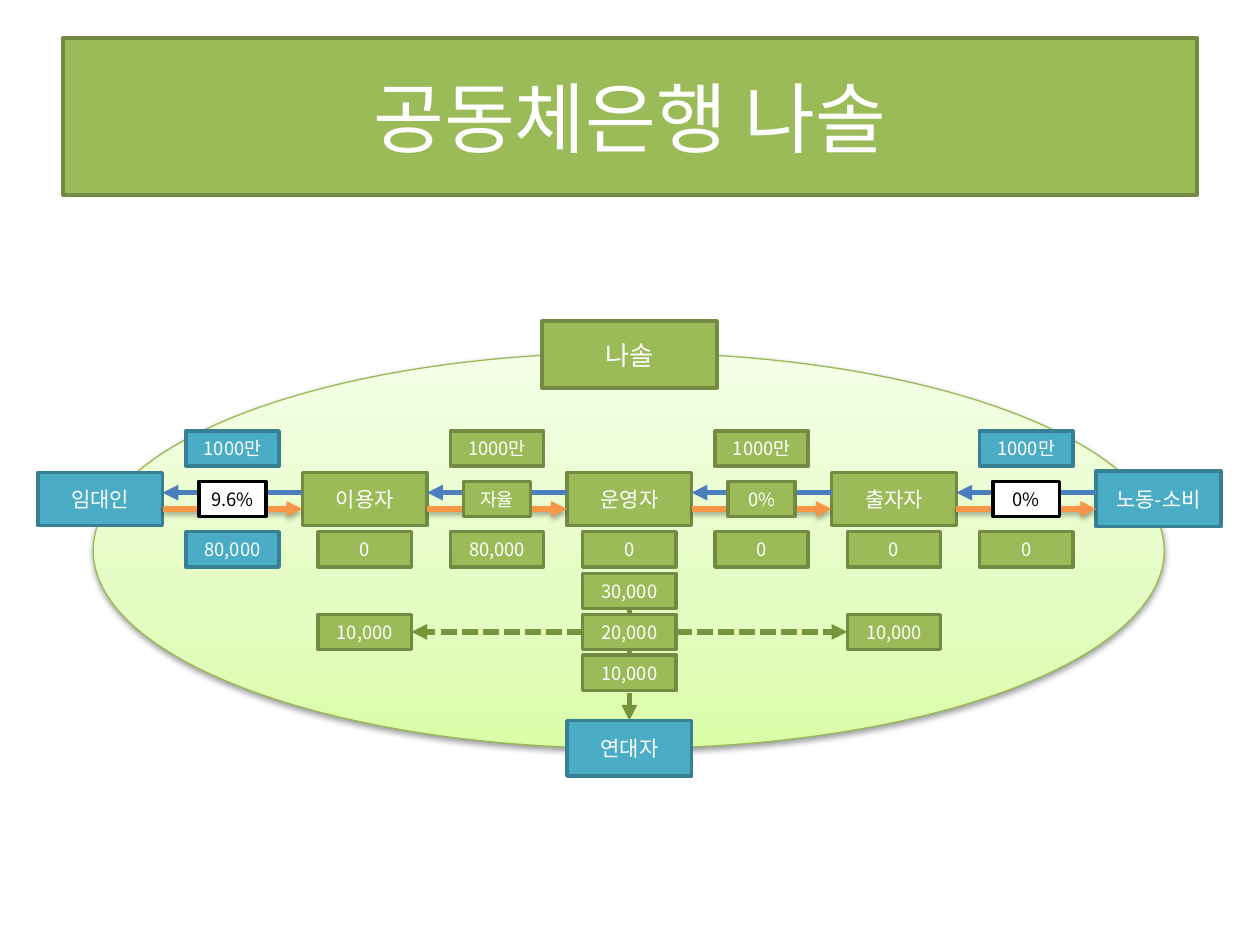
from lxml.etree import SubElement
from pptx import Presentation
from pptx.dml.color import RGBColor
from pptx.enum.dml import MSO_LINE
from pptx.enum.shapes import MSO_CONNECTOR, MSO_SHAPE
from pptx.enum.text import MSO_ANCHOR, PP_ALIGN
from pptx.oxml.ns import qn
from pptx.util import Inches, Pt

THEME = {
    "font": "Noto Sans CJK KR",
    "title": 44, "bank": 15, "person": 12, "value": 10.5,
    "box_line": 2, "arrow_line": 3, "ellipse_line": 0.75,
    "inside": ("9BBB59", "738A42", "FFFFFF"),
    "outside": ("4BACC6", "377F92", "FFFFFF"),
    "market": ("FFFFFF", "000000", "000000"),
    "ellipse": "98B955",
    "gradient": [(0, "DAFDA7"), (35, "E4FCC2"), (100, "F5FFE7")],
    "money": "4B7EBC", "interest": "F79646", "share": "77933C",
}

TITLE = "공동체은행 나솔"
BANK = "나솔"
PARTNER = "연대자"
PEOPLE = [
    ("임대인", "outside", 0.42),
    ("이용자", "inside", 0.42),
    ("운영자", "inside", 0.42),
    ("출자자", "inside", 0.42),
    ("노동-소비", "outside", 0.44),
]
FLOWS = [
    (("1000만", "outside"), ("9.6%", "market"), ("80,000", "outside")),
    (("1000만", "inside"), ("자율", "inside"), ("80,000", "inside")),
    (("1000만", "inside"), ("0%", "inside"), ("0", "inside")),
    (("1000만", "outside"), ("0%", "market"), ("0", "inside")),
]
BALANCES = {1: "0", 2: "0", 3: "0"}
SHARES = [
    ("reserve", "30,000", 2, 0),
    ("operator", "20,000", 2, 1),
    ("solidarity", "10,000", 2, 2),
    ("user", "10,000", 1, 1),
    ("investor", "10,000", 3, 1),
]

LEFT, PITCH = 0.3, 2.1
PERSON_WIDTH, PERSON_MIDDLE = 0.99, 3.96
VALUE_WIDTH, RATE_WIDTH, VALUE_HEIGHT = 0.74, 0.53, 0.28
VALUE_TOPS = (3.42, 3.82, 4.22)
VALUE_WIDTHS = (VALUE_WIDTH, RATE_WIDTH, VALUE_WIDTH)
SHARE_TOP, SHARE_STEP = 4.55, 0.325
MONEY_Y, INTEREST_Y = 3.91, 4.04


def color(value):
    return RGBColor.from_string(value)


def add_shadow(shape, alpha, distance):
    effects = shape._element.spPr.get_or_add_effectLst() if hasattr(
        shape._element.spPr, "get_or_add_effectLst"
    ) else SubElement(shape._element.spPr, qn("a:effectLst"))
    shadow = SubElement(effects, qn("a:outerShdw"), blurRad=str(Pt(3.1)),
                        dist=str(Pt(distance)), dir="5400000", rotWithShape="0")
    black = SubElement(shadow, qn("a:srgbClr"), val="000000")
    SubElement(black, qn("a:alpha"), val=str(alpha * 1000))


def format_box(shape, text, style, size):
    fill, line, ink = THEME[style]
    shape.shadow.inherit = False
    shape.fill.solid()
    shape.fill.fore_color.rgb = color(fill)
    shape.line.color.rgb = color(line)
    shape.line.width = Pt(THEME["box_line"])
    frame = shape.text_frame
    frame_format = {
        "word_wrap": True, "vertical_anchor": MSO_ANCHOR.MIDDLE,
        "margin_left": Inches(0.05), "margin_right": Inches(0.05),
        "margin_top": 0, "margin_bottom": 0,
    }
    for name, value in frame_format.items():
        setattr(frame, name, value)
    paragraph = frame.paragraphs[0]
    paragraph.alignment = PP_ALIGN.CENTER
    run = paragraph.add_run()
    run.text = text
    for name, value in {"name": THEME["font"], "size": Pt(THEME[size])}.items():
        setattr(run.font, name, value)
    run.font.color.rgb = color(ink)
    SubElement(run._r.get_or_add_rPr(), qn("a:ea"), typeface=THEME["font"])


def add_box(slide, text, style, size, center, top, width, height):
    shape = slide.shapes.add_shape(
        MSO_SHAPE.RECTANGLE, Inches(center - width / 2), Inches(top),
        Inches(width), Inches(height))
    format_box(shape, text, style, size)
    return shape


def add_arrow(shapes, start, end, line_color):
    connector = shapes.add_connector(
        MSO_CONNECTOR.STRAIGHT, *(Inches(value) for value in (*start, *end)))
    connector.line.color.rgb = color(THEME[line_color])
    connector.line.width = Pt(THEME["arrow_line"])
    if line_color == "share":
        connector.line.dash_style = MSO_LINE.SQUARE_DOT
    SubElement(connector.line._get_or_add_ln(), qn("a:tailEnd"), type="triangle")
    if line_color == "interest":
        add_shadow(connector, 35, 1.8)
    else:
        SubElement(connector._element.spPr, qn("a:effectLst"))
    return connector


def add_ellipse(slide):
    ellipse = slide.shapes.add_shape(
        MSO_SHAPE.OVAL, Inches(0.74), Inches(2.8), Inches(8.5), Inches(3.14))
    ellipse.fill.gradient()
    gradient = ellipse._element.spPr.find(qn("a:gradFill"))
    for child in list(gradient):
        gradient.remove(child)
    stops = SubElement(gradient, qn("a:gsLst"))
    for position, value in THEME["gradient"]:
        stop = SubElement(stops, qn("a:gs"), pos=str(position * 1000))
        SubElement(stop, qn("a:srgbClr"), val=value)
    SubElement(gradient, qn("a:lin"), ang="16200000", scaled="0")
    ellipse.line.color.rgb = color(THEME["ellipse"])
    ellipse.line.width = Pt(THEME["ellipse_line"])
    add_shadow(ellipse, 38, 1.6)


def main():
    presentation = Presentation()
    presentation.slide_width, presentation.slide_height = Inches(10), Inches(7.5)
    slide = presentation.slides.add_slide(presentation.slide_layouts[5])
    title = slide.shapes.title
    title_place = {"left": 0.5, "top": 0.3, "width": 9, "height": 1.25}
    for name, value in title_place.items():
        setattr(title, name, Inches(value))
    format_box(title, TITLE, "inside", "title")

    add_ellipse(slide)
    share_arrows = [add_arrow(slide.shapes, (5, 5), (5, 5), "share") for _ in range(3)]
    centers = [LEFT + PERSON_WIDTH / 2 + PITCH * i for i in range(len(PEOPLE))]

    for center, (name, style, height) in zip(centers, PEOPLE):
        add_box(slide, name, style, "person", center, PERSON_MIDDLE - height / 2,
                PERSON_WIDTH, height)

    for center, values in zip(centers, FLOWS):
        start = center + PERSON_WIDTH / 2
        end = center + PITCH - PERSON_WIDTH / 2
        pair = slide.shapes.add_group_shape().shapes
        add_arrow(pair, (end, MONEY_Y), (start, MONEY_Y), "money")
        add_arrow(pair, (start, INTEREST_Y), (end, INTEREST_Y), "interest")
        for (text, style), top, width in zip(values, VALUE_TOPS, VALUE_WIDTHS):
            add_box(slide, text, style, "value", center + PITCH / 2, top,
                    width, VALUE_HEIGHT)

    for column, text in BALANCES.items():
        add_box(slide, text, "inside", "value", centers[column], VALUE_TOPS[2],
                VALUE_WIDTH, VALUE_HEIGHT)

    boxes = {
        name: add_box(slide, text, "inside", "value", centers[column],
                      SHARE_TOP + SHARE_STEP * row, VALUE_WIDTH, VALUE_HEIGHT)
        for name, text, column, row in SHARES
    }
    boxes["partner"] = add_box(slide, PARTNER, "outside", "person", centers[2],
                               5.72, PERSON_WIDTH, 0.44)
    add_box(slide, BANK, "inside", "bank", centers[2], 2.55, 1.39, 0.53)

    routes = [("operator", 3, "investor", 1), ("reserve", 2, "partner", 0),
              ("operator", 1, "user", 3)]
    for arrow, (source, source_side, target, target_side) in zip(share_arrows, routes):
        arrow.begin_connect(boxes[source], source_side)
        arrow.end_connect(boxes[target], target_side)

    presentation.save("out.pptx")


if __name__ == "__main__":
    main()
